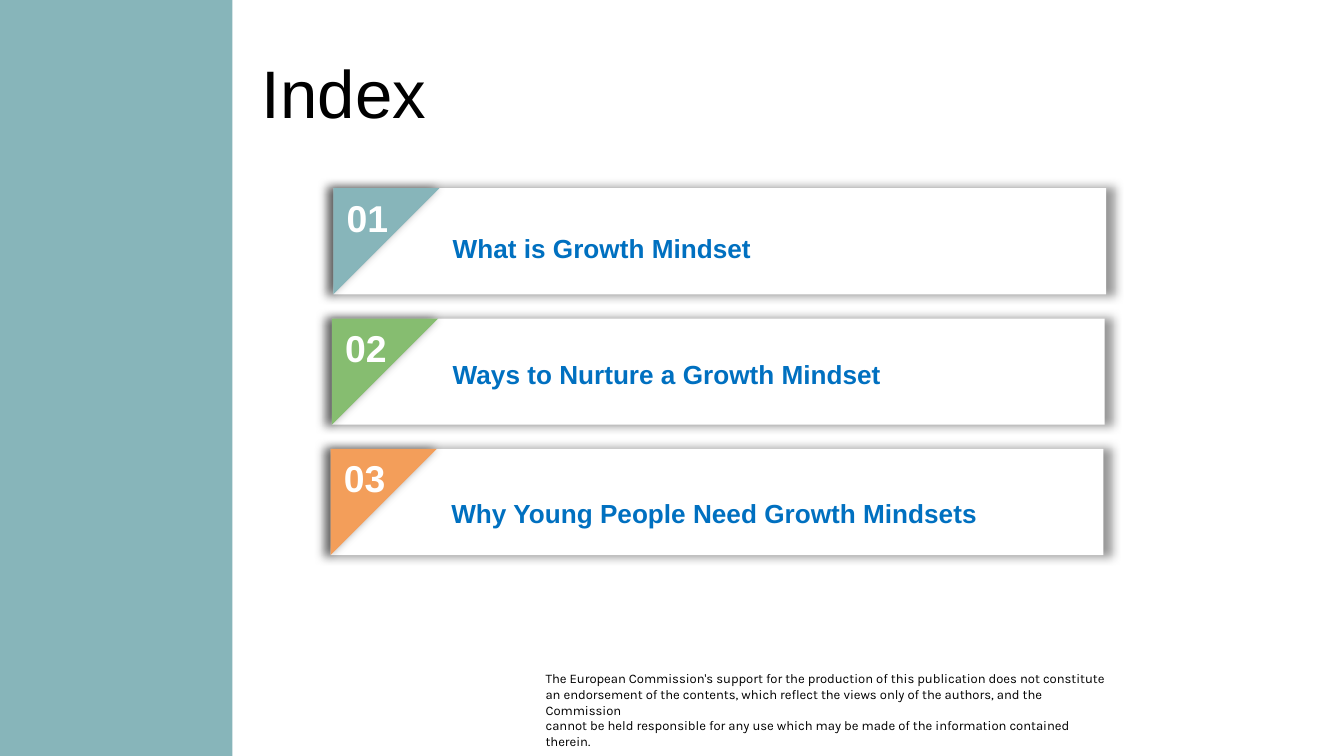
from lxml.etree import SubElement
from pptx import Presentation
from pptx.dml.color import RGBColor as Rgb
from pptx.enum.shapes import MSO_SHAPE as Shape
from pptx.enum.text import MSO_ANCHOR as Anchor, MSO_AUTO_SIZE as Auto
from pptx.oxml.ns import qn
from pptx.util import Inches, Pt

COLORS = {
    "teal": "87B5BA", "green": "86BD70", "orange": "F39E5A",
    "white": "FFFFFF", "black": "000000", "blue": "0070C0",
}
NOTICE = [
    "The European Commission's support for the production of this publication "
    "does not constitute an endorsement of the contents, which reflect the "
    "views only of the authors, and the Commission",
    "cannot be held responsible for any use which may be made of the "
    "information contained therein.",
]
# topic, corner colour, left of card, left and top of topic text
ROWS = [
    ("What is Growth Mindset", "teal", 2.48, 3.27, 1.68),
    ("Ways to Nurture a Growth Mindset", "green", 2.47, 3.27, 2.62),
    ("Why Young People Need Growth Mindsets", "orange", 2.46, 3.26, 3.65),
]
PAGE_W = 10
PAGE_H = PAGE_W * 9 / 16
TOP, STEP, WIDE, HIGH = 1.4, 0.97, 5.75, 0.79


def write(frame, lines, size=14, color="black", font="Arial", bold=False):
    for i, line in enumerate(lines):
        para = frame.paragraphs[0] if i == 0 else frame.add_paragraph()
        run = para.add_run()
        run.text = line
        run.font.size = Pt(size)
        run.font.name = font
        run.font.bold = bold
        run.font.color.rgb = Rgb.from_string(COLORS[color])


def glow(shape):
    """Add a soft centred shadow, slightly larger than the shape."""
    effects = shape._element.spPr.find(qn("a:effectLst"))
    shadow = SubElement(effects, qn("a:outerShdw"), blurRad=str(Pt(5)),
                        sx="102000", sy="102000", algn="ctr", rotWithShape="0")
    color = SubElement(shadow, qn("a:srgbClr"), val=COLORS["black"])
    SubElement(color, qn("a:alpha"), val="40000")


class Deck:
    def __init__(self, wide, high):
        self.prs = Presentation()
        self.prs.slide_width = Inches(wide)
        self.prs.slide_height = Inches(high)
        self.slide = self.prs.slides.add_slide(self.prs.slide_layouts[6])

    def shape(self, kind, box, color, group=None):
        owner = group or self.slide
        item = owner.shapes.add_shape(kind, *map(Inches, box))
        item.shadow.inherit = False
        item.fill.solid()
        item.fill.fore_color.rgb = Rgb.from_string(COLORS[color])
        item.line.fill.background()
        return item

    def text(self, box, *lines, anchor=Anchor.TOP, inset=True, grow=True, **style):
        frame = self.slide.shapes.add_textbox(*map(Inches, box)).text_frame
        frame.word_wrap = True
        frame.auto_size = Auto.SHAPE_TO_FIT_TEXT if grow else Auto.NONE
        frame.vertical_anchor = anchor
        if not inset:
            frame.margin_left = frame.margin_right = 0
            frame.margin_top = frame.margin_bottom = 0
        write(frame, lines, **style)

    def card(self, left, top, color):
        group = self.slide.shapes.add_group_shape()
        glow(self.shape(Shape.RECTANGLE, (left, top, WIDE, HIGH), "white", group))
        corner = self.shape(Shape.RIGHT_TRIANGLE, (left, top, HIGH, HIGH), color, group)
        corner.rotation = 90
        glow(corner)


def main():
    deck = Deck(PAGE_W, PAGE_H)
    deck.text((4.06, 4.99, 4.17, 0.35), *NOTICE, inset=False, size=7, font="Karla")
    deck.shape(Shape.RECTANGLE, (0, 0, 1.73, PAGE_H), "teal")
    deck.text((1.85, 0.37, 7.2, 0.63), "Index", anchor=Anchor.MIDDLE,
              grow=False, size=36)
    tops = [TOP + i * STEP for i in range(len(ROWS))]
    for (_, color, left, *_), top in zip(ROWS, tops):
        deck.card(left, top, color)
    for i, ((_, _, left, *_), top) in enumerate(zip(ROWS, tops), 1):
        deck.text((left, top, 0.58, 0.44), f"{i:02}", size=20,
                  color="white", bold=True)
    for topic, _, _, left, top in ROWS:
        deck.text((left, top, 4.8, 0.34), topic, color="blue", bold=True)
    deck.prs.save("out.pptx")


if __name__ == "__main__":
    main()
